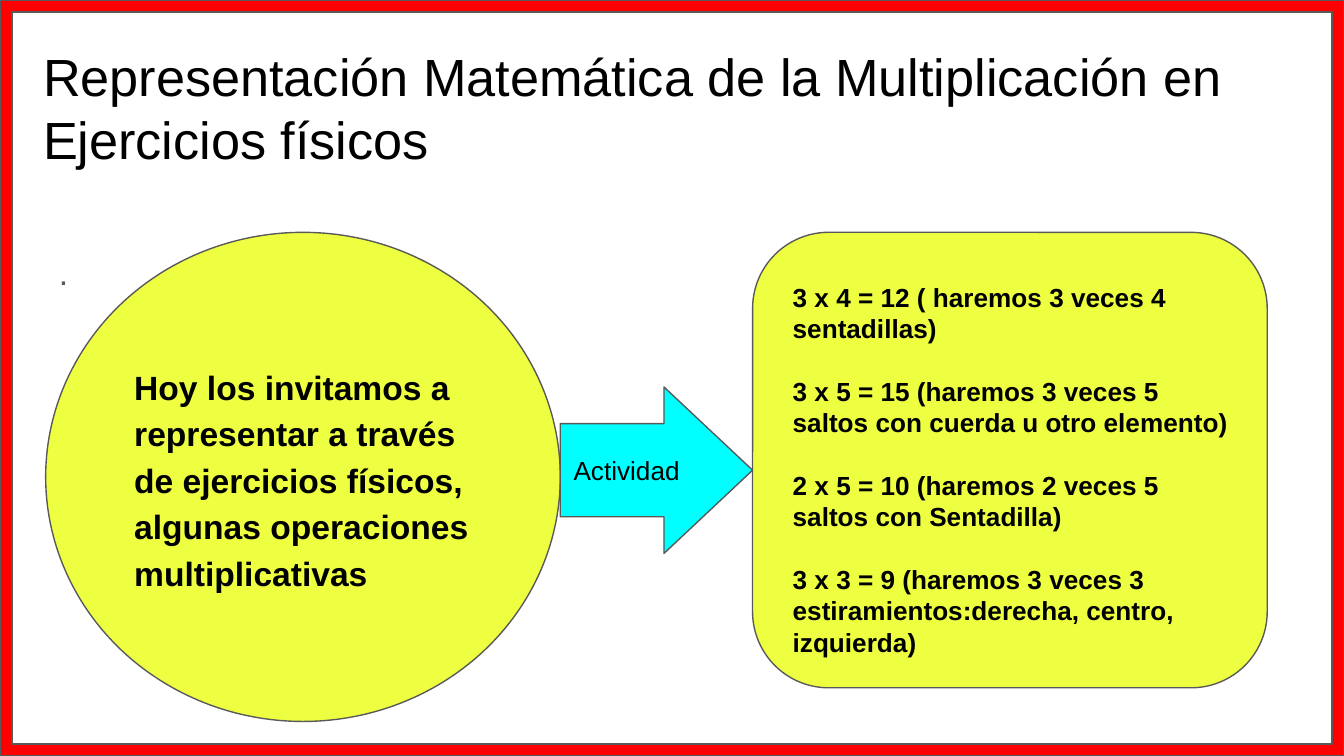
"""Build the slide on multiplication through physical exercise."""
from pptx import Presentation
from pptx.dml.color import RGBColor
from pptx.enum import shapes, text
from pptx.util import Pt

KIND = shapes.MSO_SHAPE
TOP, MID = text.MSO_ANCHOR.TOP, text.MSO_ANCHOR.MIDDLE
WIDE, HIGH = 720, 405
RED, LIME, CYAN = "FF0000", "EEFF41", "00FFFF"
BLACK, GREY = "000000", "595959"

TITLE = ["Representación Matemática de la Multiplicación en Ejercicios físicos"]
DOT = ["."]
INVITE = ["Hoy los invitamos a representar a través de ejercicios físicos, "
          "algunas operaciones multiplicativas"]
LABEL = ["Actividad"]
TASKS = [
    "3 x 4 = 12 ( haremos 3 veces 4 sentadillas)",
    "3 x 5 = 15 (haremos 3 veces 5 saltos con cuerda u otro elemento)",
    "2 x 5 = 10 (haremos 2 veces 5 saltos con Sentadilla)",
    "3 x 3 = 9 (haremos 3 veces 3 estiramientos:derecha, centro, izquierda)",
]

LEFT, ROW, SIDE, GAP = 24.5, 124.5, 275.7, 103
ARROW = LEFT + SIDE
PANEL = ARROW + GAP


def tint(code):
    return RGBColor.from_string(code)


def write(shape, lines, size, color=BLACK, bold=False, anchor=TOP,
          pitch=None, after=0, before=0):
    frame = shape.text_frame
    frame.word_wrap = True
    frame.vertical_anchor = anchor
    frame.margin_left = frame.margin_right = Pt(7.2)
    frame.margin_top = frame.margin_bottom = Pt(7.2)
    for i, line in enumerate(lines):
        para = frame.add_paragraph() if i else frame.paragraphs[0]
        para.alignment = text.PP_ALIGN.LEFT
        para.space_before = Pt(before if i else 0)
        para.space_after = Pt(after)
        if pitch:
            para.line_spacing = pitch
        run = para.add_run()
        run.text = line
        font = run.font
        font.name, font.size, font.bold = "Arial", Pt(size), bold
        font.color.rgb = tint(color)


def draw(slide, kind, box, fill, adj=(), edge=True):
    shape = slide.shapes.add_shape(kind, *map(Pt, box))
    shape.shadow.inherit = False
    for i, value in enumerate(adj):
        shape.adjustments[i] = value
    shape.fill.solid()
    shape.fill.fore_color.rgb = tint(fill)
    if edge:
        shape.line.color.rgb = tint(GREY)
        shape.line.width = Pt(0.75)
    else:
        shape.line.fill.background()
    return shape


def main():
    deck = Presentation()
    deck.slide_width, deck.slide_height = Pt(WIDE), Pt(HIGH)
    slide = deck.slides.add_slide(deck.slide_layouts[6])

    title = slide.shapes.add_textbox(*map(Pt, (16, 16.5, 671, 89)))
    write(title, TITLE, 28)
    body = slide.shapes.add_textbox(*map(Pt, (LEFT, ROW, 671, 280.5)))
    write(body, DOT, 18, GREY, pitch=1.15, after=16)

    draw(slide, KIND.FRAME, (0, 0, WIDE, HIGH), RED, [0.016])
    oval = draw(slide, KIND.OVAL, (LEFT, ROW, SIDE, 262), LIME)
    write(oval, INVITE, 18, bold=True, anchor=MID, pitch=1.15, after=16)
    draw(slide, KIND.ROUNDED_RECTANGLE, (PANEL, ROW, SIDE, 244), LIME, [0.167])
    arrow = draw(slide, KIND.RIGHT_ARROW, (ARROW, 207.3, GAP, 89.2), CYAN,
                 [0.559, 0.532])
    write(arrow, LABEL, 14, anchor=MID)
    card = draw(slide, KIND.RECTANGLE, (417.6, 143.3, 252, 209.5), LIME,
                edge=False)
    write(card, TASKS, 14, bold=True, before=16.8)
    deck.save("out.pptx")


if __name__ == "__main__":
    main()
